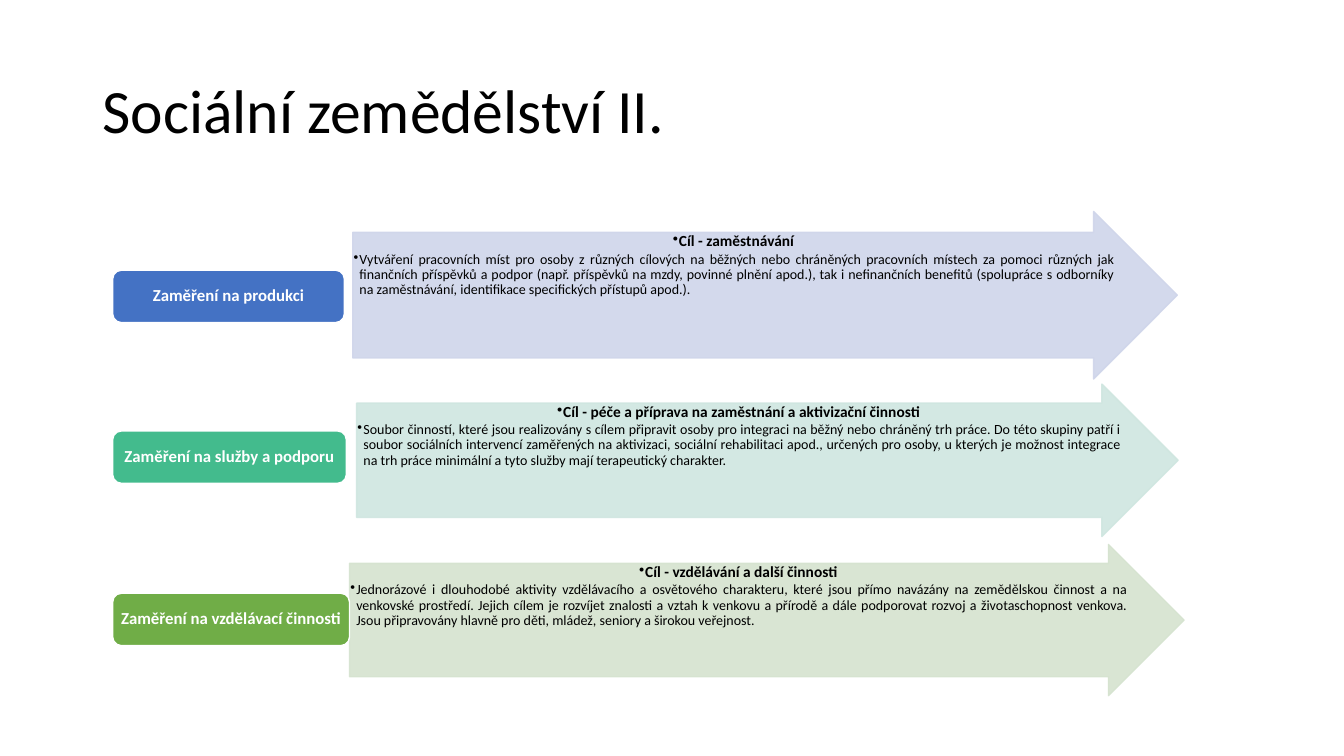
from lxml import etree
from pptx import Presentation
from pptx.dml.color import RGBColor
from pptx.enum.shapes import MSO_SHAPE
from pptx.enum.text import MSO_ANCHOR, PP_ALIGN
from pptx.oxml.ns import qn
from pptx.util import Cm, Pt

ARROW, LABEL = MSO_SHAPE.RIGHT_ARROW, MSO_SHAPE.ROUNDED_RECTANGLE
LEFT, CENTER, JUSTIFY = PP_ALIGN.LEFT, PP_ALIGN.CENTER, PP_ALIGN.JUSTIFY
TOP, MIDDLE = MSO_ANCHOR.TOP, MSO_ANCHOR.MIDDLE
BLACK, WHITE = RGBColor(0, 0, 0), RGBColor(255, 255, 255)
BLUE, PALE_BLUE = RGBColor(0x44, 0x72, 0xC4), RGBColor(0xCF, 0xD5, 0xEA)
TEAL, PALE_TEAL = RGBColor(0x43, 0xBB, 0x8D), RGBColor(0xCF, 0xE6, 0xE0)
GREEN, PALE_GREEN = RGBColor(0x70, 0xAD, 0x47), RGBColor(0xD5, 0xE3, 0xCF)

TITLE = "Sociální zemědělství II."
LABEL_LEFT, LABEL_HEIGHT = 2.84, 1.32

# Boxes in cm: arrow is (left, top, width, height), label is (top, width)
ROWS = [
    dict(label="Zaměření na produkci", goal="Cíl - zaměstnávání",
         detail="Vytváření pracovních míst pro osoby z různých cílových na běžných nebo "
                "chráněných pracovních místech za pomoci různých jak finančních příspěvků "
                "a podpor (např. příspěvků na mzdy, povinné plnění apod.), tak i nefinančních "
                "benefitů (spolupráce s odborníky na zaměstnávání, identifikace specifických "
                "přístupů apod.).",
         color=BLUE, pale=PALE_BLUE,
         arrow_box=(8.89, 5.33, 20.78, 4.22), label_box=(6.81, 5.84)),
    dict(label="Zaměření na služby a podporu",
         goal="Cíl - péče a příprava na zaměstnání a aktivizační činnosti",
         detail="Soubor činností, které jsou realizovány s cílem připravit osoby pro integraci "
                "na běžný nebo chráněný trh práce. Do této skupiny patří i soubor sociálních "
                "intervencí zaměřených na aktivizaci, sociální rehabilitaci apod., určených pro "
                "osoby, u kterých je možnost integrace na trh práce minimální a tyto služby "
                "mají terapeutický charakter.",
         color=TEAL, pale=PALE_TEAL,
         arrow_box=(8.99, 9.68, 20.7, 3.84), label_box=(10.86, 5.89)),
    dict(label="Zaměření na vzdělávací činnosti", goal="Cíl - vzdělávání a další činnosti",
         detail="Jednorázové i dlouhodobé aktivity vzdělávacího a osvětového charakteru, které "
                "jsou přímo navázány na zemědělskou činnost a na venkovské prostředí. Jejich "
                "cílem je rozvíjet znalosti a vztah k venkovu a přírodě a dále podporovat rozvoj "
                "a životaschopnost venkova. Jsou připravovány hlavně pro děti, mládež, seniory "
                "a širokou veřejnost.",
         color=GREEN, pale=PALE_GREEN,
         arrow_box=(8.81, 13.72, 21.03, 3.81), label_box=(14.95, 5.97)),
]


def write(p, text, size, color=BLACK, bold=False, align=LEFT, after=0, bullet=False):
    if bullet:
        pPr = p._p.get_or_add_pPr()
        pPr.set("marL", str(Cm(0.15)))
        pPr.set("indent", str(Cm(-0.15)))
        etree.SubElement(pPr, qn("a:buChar"), char="•")
    p.alignment, p.line_spacing = align, 0.9
    p.space_before, p.space_after = Pt(0), Pt(after)
    r = p.add_run()
    r.text = text
    r.font.name, r.font.size, r.font.bold = "Calibri", Pt(size), bold
    r.font.color.rgb = color


def add_box(s, kind, box, fill, line, anchor, inset_x, inset_y):
    sp = s.shapes.add_shape(kind, *(Cm(v) for v in box))
    sp.shadow.inherit = False
    sp.fill.solid()
    sp.fill.fore_color.rgb = fill
    sp.line.color.rgb = line
    sp.line.width = Pt(1)
    tf = sp.text_frame
    tf.word_wrap = True
    tf.vertical_anchor = anchor
    tf.margin_left = tf.margin_right = Cm(inset_x)
    tf.margin_top = tf.margin_bottom = Cm(inset_y)
    return sp


def set_opacity(sp, percent):
    for color in sp._element.spPr.iter(qn("a:srgbClr")):
        etree.SubElement(color, qn("a:alpha"), val=str(percent * 1000))


def add_row(s, row):
    arrow = add_box(s, ARROW, row["arrow_box"], row["pale"], row["pale"], TOP, 0.02, 0.02)
    arrow.adjustments[0] = 0.75
    set_opacity(arrow, 90)
    tf = arrow.text_frame
    write(tf.paragraphs[0], row["goal"], 11, bold=True, align=CENTER, after=1.5, bullet=True)
    write(tf.add_paragraph(), row["detail"], 10, align=JUSTIFY, after=1.5, bullet=True)

    top, width = row["label_box"]
    label = add_box(s, LABEL, (LABEL_LEFT, top, width, LABEL_HEIGHT),
                    row["color"], WHITE, MIDDLE, 0.12, 0.08)
    write(label.text_frame.paragraphs[0], row["label"], 12, WHITE, bold=True, align=CENTER)


def main():
    prs = Presentation()
    prs.slide_width, prs.slide_height = Cm(33.87), Cm(19.05)
    s = prs.slides.add_slide(prs.slide_layouts[5])
    title = s.shapes.title
    title.left, title.top, title.width, title.height = Cm(2.33), Cm(1.01), Cm(29.21), Cm(3.68)
    title.text_frame.vertical_anchor = MIDDLE
    write(title.text_frame.paragraphs[0], TITLE, 44)
    for row in ROWS:
        add_row(s, row)
    prs.save("out.pptx")


if __name__ == "__main__":
    main()
